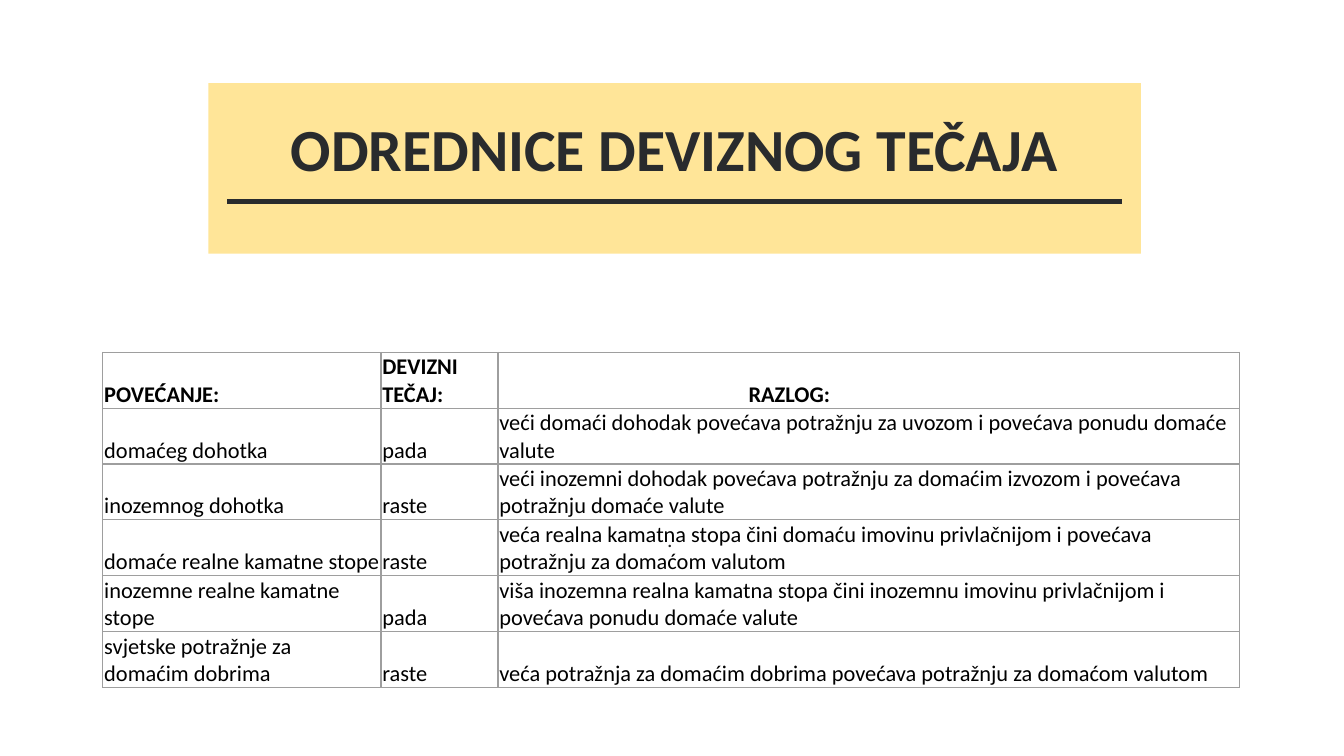
from dataclasses import dataclass

from lxml import etree
from pptx import Presentation
from pptx.dml.color import RGBColor
from pptx.enum import shapes, text
from pptx.oxml.ns import qn
from pptx.util import Pt


@dataclass(frozen=True)
class Theme:
    ink: str = "292B2D"
    black: str = "000000"
    banner: str = "FFE598"
    grid: str = "9E9E9E"
    font: str = "Calibri"
    mark_font: str = "Karla"
    title_size: float = 32
    body_size: float = 12
    rule_width: float = 3
    grid_width: float = 0.75


THEME = Theme()

HEADINGS = ("POVEĆANJE:", "DEVIZNI TEČAJ:", "RAZLOG:")
DETERMINANTS = (
    ("domaćeg dohotka", "pada",
     "veći domaći dohodak povećava potražnju za uvozom i povećava ponudu domaće valute"),
    ("inozemnog dohotka", "raste",
     "veći inozemni dohodak povećava potražnju za domaćim izvozom i povećava "
     "potražnju domaće valute"),
    ("domaće realne kamatne stope", "raste",
     "veća realna kamatna stopa čini domaću imovinu privlačnijom i povećava "
     "potražnju za domaćom valutom"),
    ("inozemne realne kamatne stope", "pada",
     "viša inozemna realna kamatna stopa čini inozemnu imovinu privlačnijom i "
     "povećava ponudu domaće valute"),
    ("svjetske potražnje za domaćim dobrima", "raste",
     "veća potražnja za domaćim dobrima povećava potražnju za domaćom valutom"),
)
COLUMN_WIDTHS = (149, 62.7, 397.4)
REASON_INDENT = 133.5


def style_text(paragraph, size, color, font=THEME.font, bold=False):
    for run in paragraph.runs:
        run.font.name = font
        run.font.size = Pt(size)
        run.font.bold = bold
        run.font.color.rgb = RGBColor.from_string(color)


def set_margins(frame, left, top, right, bottom):
    frame.margin_left, frame.margin_top = Pt(left), Pt(top)
    frame.margin_right, frame.margin_bottom = Pt(right), Pt(bottom)


def add_banner(slide, left, top, width, height):
    """Title on a filled band, underlined by a rule inset from both sides."""
    banner = slide.shapes.add_shape(
        shapes.MSO_SHAPE.RECTANGLE, Pt(left), Pt(top), Pt(width), Pt(height))
    banner.shadow.inherit = False
    banner.fill.solid()
    banner.fill.fore_color.rgb = RGBColor.from_string(THEME.banner)
    banner.line.fill.background()
    frame = banner.text_frame
    frame.word_wrap = True
    frame.vertical_anchor = text.MSO_ANCHOR.TOP
    set_margins(frame, 7.2, 15.5, 7.2, 7.2)
    frame.text = "ODREDNICE DEVIZNOG TEČAJA"
    title = frame.paragraphs[0]
    title.alignment = text.PP_ALIGN.CENTER
    style_text(title, THEME.title_size, THEME.ink, bold=True)

    inset, rule_y = 10.1, top + 63.4
    rule = slide.shapes.add_connector(
        shapes.MSO_CONNECTOR.STRAIGHT,
        Pt(left + inset), Pt(rule_y), Pt(left + width - inset), Pt(rule_y))
    rule.line.color.rgb = RGBColor.from_string(THEME.ink)
    rule.line.width = Pt(THEME.rule_width)
    etree.SubElement(rule._element.spPr, qn("a:effectLst"))


def add_mark(slide, left, top, width, height):
    """The lone full stop of the subtitle, centred in its box."""
    subtitle = slide.shapes.add_textbox(Pt(left), Pt(top), Pt(width), Pt(height))
    frame = subtitle.text_frame
    frame.word_wrap = True
    set_margins(frame, 0, 0, 0, 0)
    frame.text = "."
    mark = frame.paragraphs[0]
    mark.alignment = text.PP_ALIGN.CENTER
    style_text(mark, THEME.body_size, THEME.ink, THEME.mark_font)


def set_borders(cell):
    properties = cell._tc.get_or_add_tcPr()
    for position, side in enumerate(("lnL", "lnR", "lnT", "lnB")):
        border = etree.Element(qn(f"a:{side}"), w=str(Pt(THEME.grid_width)))
        fill = etree.SubElement(border, qn("a:solidFill"))
        etree.SubElement(fill, qn("a:srgbClr"), val=THEME.grid)
        properties.insert(position, border)


def add_determinants(slide, left, top, width, height):
    rows = (HEADINGS, *DETERMINANTS)
    table = slide.shapes.add_table(
        len(rows), len(HEADINGS), Pt(left), Pt(top), Pt(width), Pt(height)).table
    table.first_row = table.horz_banding = False
    for column, share in zip(table.columns, COLUMN_WIDTHS):
        column.width = Pt(width * share / sum(COLUMN_WIDTHS))
    for row_index, row in enumerate(rows):
        table.rows[row_index].height = Pt(height / len(rows))
        for column_index, wording in enumerate(row):
            cell = table.cell(row_index, column_index)
            cell.fill.background()
            set_borders(cell)
            set_margins(cell, 0.75, 0.75, 0.75, 0)
            cell.vertical_anchor = text.MSO_ANCHOR.BOTTOM
            cell.text_frame.text = wording
            style_text(cell.text_frame.paragraphs[0], THEME.body_size,
                       THEME.black, bold=row_index == 0)
    reason = table.cell(0, len(HEADINGS) - 1).text_frame.paragraphs[0]
    reason._p.get_or_add_pPr().set("marL", str(Pt(REASON_INDENT)))


def main():
    deck = Presentation()
    deck.slide_width, deck.slide_height = Pt(720), Pt(405)
    slide = deck.slides.add_slide(deck.slide_layouts[6])
    add_mark(slide, 15.1, 281.5, 687.6, 15)
    add_banner(slide, 111.6, 44.6, 499.7, 91.4)
    add_determinants(slide, 55.1, 188.8, 609.1, 179.5)
    deck.save("out.pptx")


if __name__ == "__main__":
    main()
